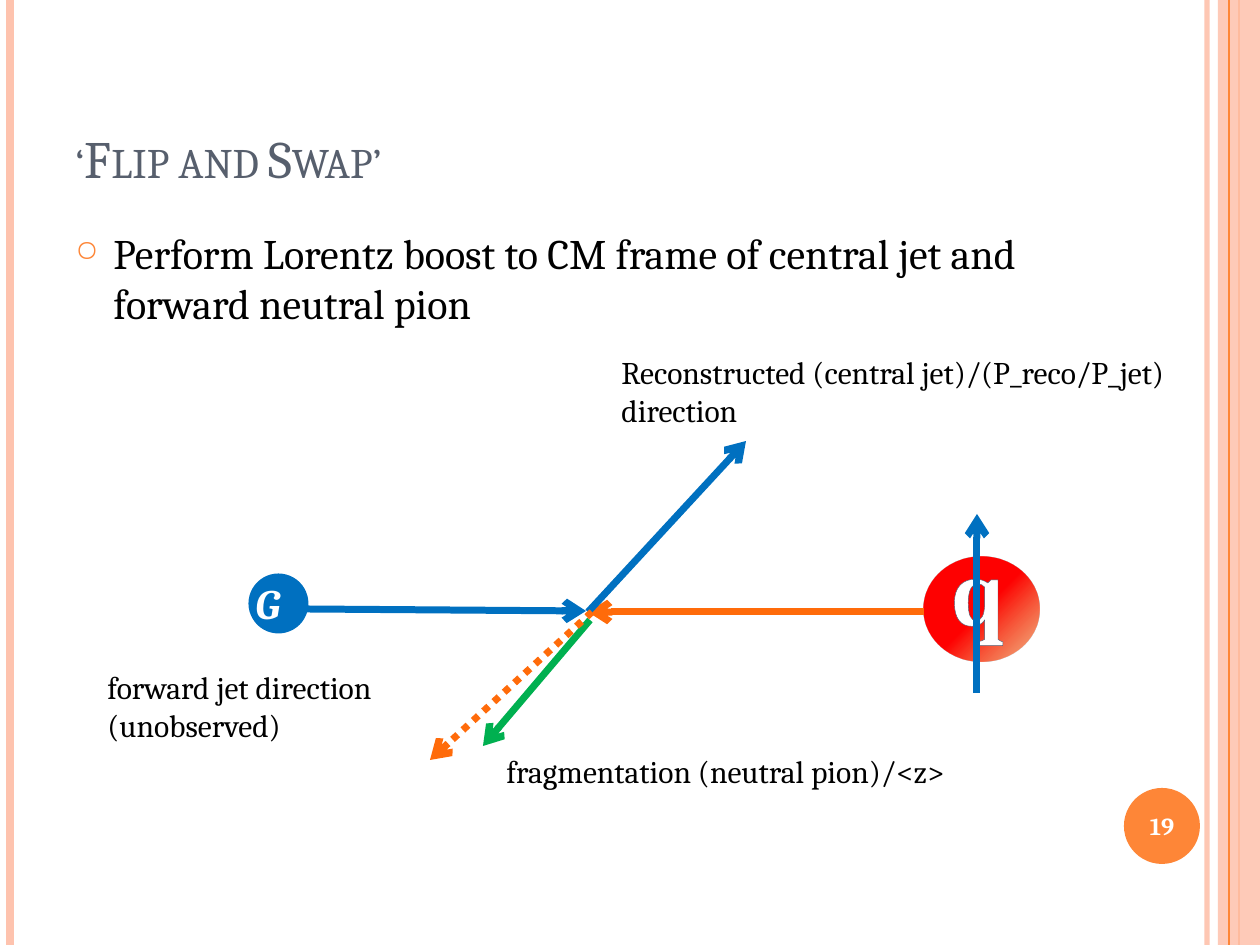
from lxml.etree import SubElement
from pptx import Presentation
from pptx.dml.color import RGBColor
from pptx.enum.dml import MSO_LINE
from pptx.enum.shapes import MSO_CONNECTOR, MSO_SHAPE
from pptx.enum.text import MSO_ANCHOR, PP_ALIGN
from pptx.oxml import parse_xml
from pptx.oxml.ns import nsdecls, qn
from pptx.util import Emu, Pt

SCALE = 914400 / 126
WIDE, HIGH = 1260, 945

WHITE = RGBColor(0xFF, 0xFF, 0xFF)
BLACK = RGBColor(0, 0, 0)
SLATE = RGBColor(0x57, 0x5F, 0x6D)
EDGE = RGBColor(0x51, 0x5D, 0x73)
PEACH = RGBColor(0xFE, 0xC3, 0xAE)
ORANGE = RGBColor(0xFE, 0x86, 0x37)
FLAME = RGBColor(0xFF, 0x6B, 0x0A)
BLUE = RGBColor(0, 0x70, 0xC0)
GREEN = RGBColor(0, 0xB0, 0x50)
RED = RGBColor(0xFF, 0, 0)
RUST = RGBColor(0xE7, 0x5C, 0x01)

# x, colour, width in points, opacity in percent
LEFT_BARS = [(1207, PEACH, 3, 93), (10, PEACH, 4.5, 100), (1239, ORANGE, 1.5, 100)]
TOP_BARS = [(1229, ORANGE, 0.75, 100)]
BAND = (1218, 0, 42, HIGH)

BADGE = (1124, 788, 76, 76)
QUARK = (924, 557, 116, 105)
GLUON = (252, 577, 53, 53)
FADE = [(0, RED, 100), (50, RED, 100), (100, RUST, 46)]

# text, box, size, colour, font format
TITLE = ("‘Flip and Swap’", (63, 38, 1029, 157), 30, SLATE, {})
BODY = ("Perform Lorentz boost to CM frame of central jet and forward neutral pion",
        (63, 221, 1029, 672), 24, BLACK, {})
NUMBER = ("19", (1120, 790, 84, 72), 14, WHITE, {"bold": True})
Q_MARK = ("q", (935, 525, 87, 127), 54, WHITE, {"bold": True})
G_MARK = ("G", (243, 571, 168, 63), 24, WHITE, {"bold": True, "italic": True})
LABELS = [
    ("Reconstructed (central jet)/(P_reco/P_jet) direction", (609, 347, 651, 89)),
    ("forward jet direction (unobserved)", (95, 662, 431, 89)),
    ("fragmentation (neutral pion)/<z>", (494, 746, 525, 50)),
]

# from, to, colour, dash
ARROWS = [
    ((305, 609), (586, 611), BLUE, None),
    ((924, 612), (588, 612), FLAME, None),
    ((590, 620), (483, 746), GREEN, None),
    ((588, 612), (746, 441), BLUE, None),
    ((592, 612), (430, 760), FLAME, MSO_LINE.ROUND_DOT),
    ((977, 693), (977, 514), BLUE, None),
]


def px(*nums):
    return [Emu(round(n * SCALE)) for n in nums]


def fade(item, rate):
    """Set the opacity, in percent, of the solid colour inside item."""
    if rate < 100:
        tint = next(item.iter(qn("a:srgbClr")))
        SubElement(tint, qn("a:alpha")).set("val", str(rate * 1000))


def add_line(start, end, color, width, rate=100):
    line = shapes.add_connector(MSO_CONNECTOR.STRAIGHT, *px(*start, *end))
    line.line.color.rgb = color
    line.line.width = Pt(width)
    props = line._element.spPr
    fade(props, rate)
    SubElement(props, qn("a:effectLst"))
    return line


def add_bars(bars):
    for x, *look in bars:
        add_line((x, 0), (x, HIGH), *look)


def add_form(kind, box, color, border=0):
    form = shapes.add_shape(kind, *px(*box))
    form.shadow.inherit = False
    form.fill.solid()
    form.fill.fore_color.rgb = color
    if border:
        form.line.color.rgb = color
        form.line.width = Pt(border)
    else:
        form.line.fill.background()
    return form


def add_text(text, box, size, color, style, anchor=MSO_ANCHOR.TOP,
             align=PP_ALIGN.LEFT, wrap=True):
    frame = shapes.add_textbox(*px(*box)).text_frame
    frame.word_wrap = wrap
    frame.vertical_anchor = anchor
    para = frame.paragraphs[0]
    para.alignment = align
    run = para.add_run()
    run.text = text
    run.font.color.rgb = color
    look = {"name": "Cambria", "size": Pt(size), **style}
    for key, value in look.items():
        setattr(run.font, key, value)
    return para, run


def add_bullet(para):
    para.space_before = Pt(6)
    props = para._p.get_or_add_pPr()
    indent = px(38)[0]
    props.set("marL", str(indent))
    props.set("indent", str(-indent))
    tint = SubElement(props, qn("a:buClr"))
    SubElement(tint, qn("a:srgbClr")).set("val", str(ORANGE))
    SubElement(props, qn("a:buSzPct")).set("val", "70000")
    SubElement(props, qn("a:buChar")).set("char", "○")


def add_quark():
    quark = add_form(MSO_SHAPE.OVAL, QUARK, RED)
    stops = "".join(
        f'<a:gs pos="{spot * 1000}"><a:srgbClr val="{color}">'
        f'<a:alpha val="{rate * 1000}"/></a:srgbClr></a:gs>'
        for spot, color, rate in FADE)
    blend = parse_xml(f'<a:gradFill {nsdecls("a")}><a:gsLst>{stops}</a:gsLst>'
                      '<a:lin ang="2700000" scaled="0"/></a:gradFill>')
    props = quark._element.spPr
    props.replace(props.find(qn("a:solidFill")), blend)
    run = add_text(*Q_MARK, align=PP_ALIGN.CENTER, wrap=False)[1]
    rim = parse_xml(f'<a:ln {nsdecls("a")} w="12700"><a:solidFill>'
                    f'<a:srgbClr val="{EDGE}"/></a:solidFill></a:ln>')
    run.font._element.insert(0, rim)


def add_arrow(start, end, color, dash):
    line = add_line(start, end, color, 4)
    if dash:
        line.line.dash_style = dash
    SubElement(line.line._get_or_add_ln(), qn("a:tailEnd")).set("type", "arrow")


deck = Presentation()
deck.slide_width, deck.slide_height = px(WIDE, HIGH)
shapes = deck.slides.add_slide(deck.slide_layouts[6]).shapes

add_bars(LEFT_BARS)
fade(add_form(MSO_SHAPE.RECTANGLE, BAND, PEACH)._element.spPr, 87)
add_bars(TOP_BARS)
add_form(MSO_SHAPE.OVAL, BADGE, ORANGE)
add_quark()

title = add_text(*TITLE, anchor=MSO_ANCHOR.BOTTOM)[1]
title.font._element.set("cap", "small")
add_bullet(add_text(*BODY)[0])
add_text(*NUMBER, anchor=MSO_ANCHOR.MIDDLE, align=PP_ALIGN.CENTER)

add_form(MSO_SHAPE.OVAL, GLUON, BLUE, 4)
add_text(*G_MARK)
for text, box in LABELS:
    add_text(text, box, 18, BLACK, {})
for arrow in ARROWS:
    add_arrow(*arrow)

deck.save("out.pptx")
